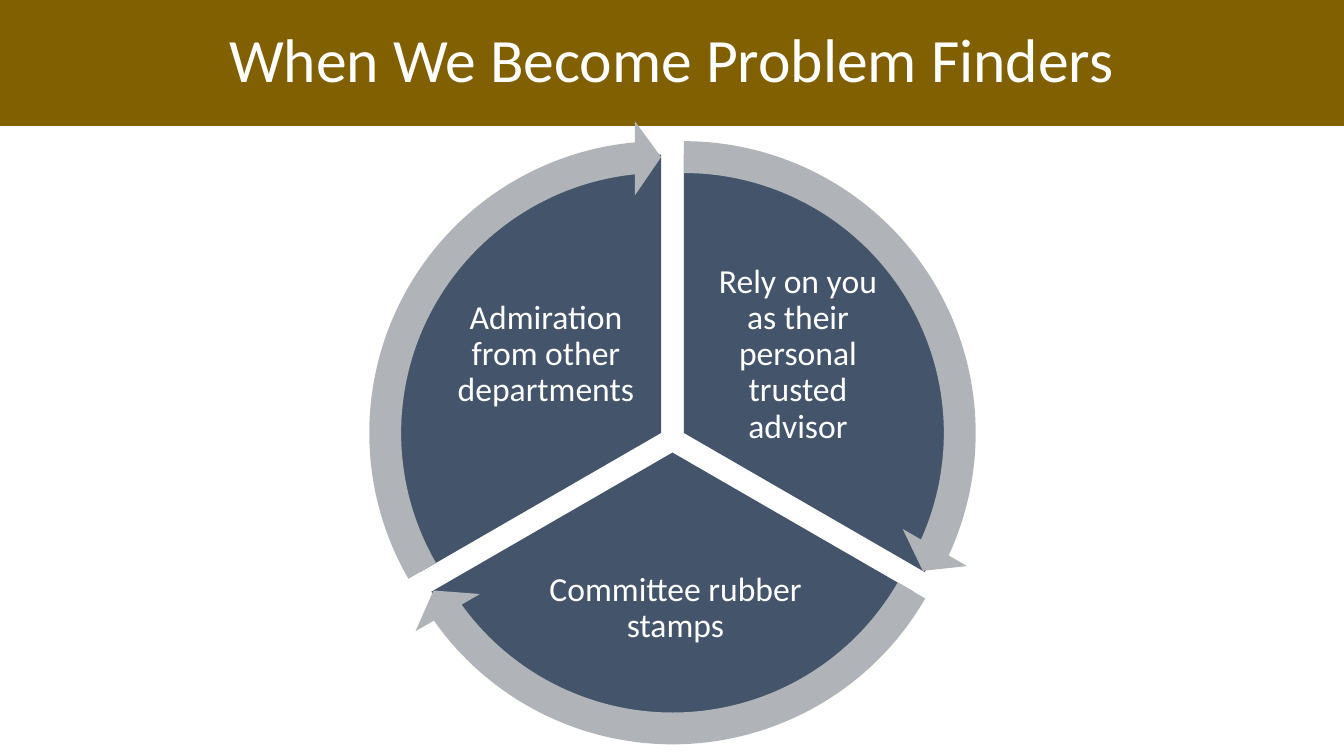
"""Build a slide with a title band and a three-part cycle of arrowed sectors."""
import math

import pptx
import pptx.dml.color
import pptx.enum.shapes
import pptx.enum.text
import pptx.util

Inches = pptx.util.Inches
SHAPES = pptx.enum.shapes.MSO_SHAPE
COLORS = {"band": "806000", "sector": "44546A", "arrow": "B0B4B9", "text": "FFFFFF"}
FRAME_FORMAT = {
    "word_wrap": True,
    "auto_size": pptx.enum.text.MSO_AUTO_SIZE.NONE,
    "vertical_anchor": pptx.enum.text.MSO_ANCHOR.MIDDLE,
}
LABEL_MARGINS = dict.fromkeys(
    ("margin_left", "margin_top", "margin_right", "margin_bottom"), Inches(0.03))
PARAGRAPH_FORMAT = {"alignment": pptx.enum.text.PP_ALIGN.CENTER, "line_spacing": 0.9}

CENTER_X, CENTER_Y, GAP = 6.67, 4.36, 0.13
SECTOR_SIZE, ARROW_SIZE = 5.52, 6.21
SWEEP = 120
DEGREE = 0.6
BAND_WIDTH, HEAD_ANGLE, HEAD_WIDTH = 0.05085, 3.275, 0.05932
SECTORS = [
    (270, "Rely on you as their personal trusted advisor", (6.93, 2.7, 1.97, 1.64)),
    (30, "Committee rubber stamps", (5.22, 5.31, 2.96, 1.45)),
    (150, "Admiration from other departments", (4.43, 2.7, 1.97, 1.64)),
]


def rgb(name):
    return pptx.dml.color.RGBColor.from_string(COLORS[name])


def apply(target, values):
    for attribute, value in values.items():
        setattr(target, attribute, value)


def write(frame, text, size, margins):
    apply(frame, FRAME_FORMAT | margins)
    paragraph = frame.paragraphs[0]
    apply(paragraph, PARAGRAPH_FORMAT)
    run = paragraph.add_run()
    run.text = text
    apply(run.font, {"name": "Calibri", "size": pptx.util.Pt(size)})
    run.font.color.rgb = rgb("text")


def add_title(slide, text):
    title = slide.shapes.title
    apply(title, {"left": 0, "top": 0, "width": Inches(13.33), "height": Inches(1.25)})
    title.fill.solid()
    title.fill.fore_color.rgb = rgb("band")
    write(title.text_frame, text, 44, {})


def add_round(cycle, kind, start, size, color, adjustments):
    """Add a round shape pushed out from the centre along its sector's middle."""
    middle = math.radians(start + SWEEP / 2)
    left = CENTER_X + GAP * math.cos(middle) - size / 2
    top = CENTER_Y + GAP * math.sin(middle) - size / 2
    shape = cycle.shapes.add_shape(
        kind, Inches(left), Inches(top), Inches(size), Inches(size))
    shape.shadow.inherit = False
    shape.fill.solid()
    shape.fill.fore_color.rgb = rgb(color)
    shape.line.fill.background()
    for index, value in enumerate(adjustments):
        shape.adjustments[index] = value


def add_sector(cycle, start, text, box):
    end = (start + SWEEP) % 360
    add_round(cycle, SHAPES.PIE, start, SECTOR_SIZE, "sector",
              (start * DEGREE, end * DEGREE))
    label = cycle.shapes.add_textbox(*map(Inches, box))
    write(label.text_frame, text, 24, LABEL_MARGINS)


def add_arrow(cycle, start):
    end = (start + SWEEP) % 360
    add_round(cycle, SHAPES.CIRCULAR_ARROW, start, ARROW_SIZE, "arrow",
              (BAND_WIDTH, HEAD_ANGLE, end * DEGREE - HEAD_ANGLE,
               start * DEGREE, HEAD_WIDTH))


def main():
    presentation = pptx.Presentation()
    apply(presentation, {"slide_width": Inches(13.33), "slide_height": Inches(7.5)})
    slide = presentation.slides.add_slide(presentation.slide_layouts[5])
    add_title(slide, "When We Become Problem Finders")
    cycle = slide.shapes.add_group_shape()
    for start, text, box in SECTORS:
        add_sector(cycle, start, text, box)
    for start, _, _ in SECTORS:
        add_arrow(cycle, start)
    presentation.save("out.pptx")


if __name__ == "__main__":
    main()
